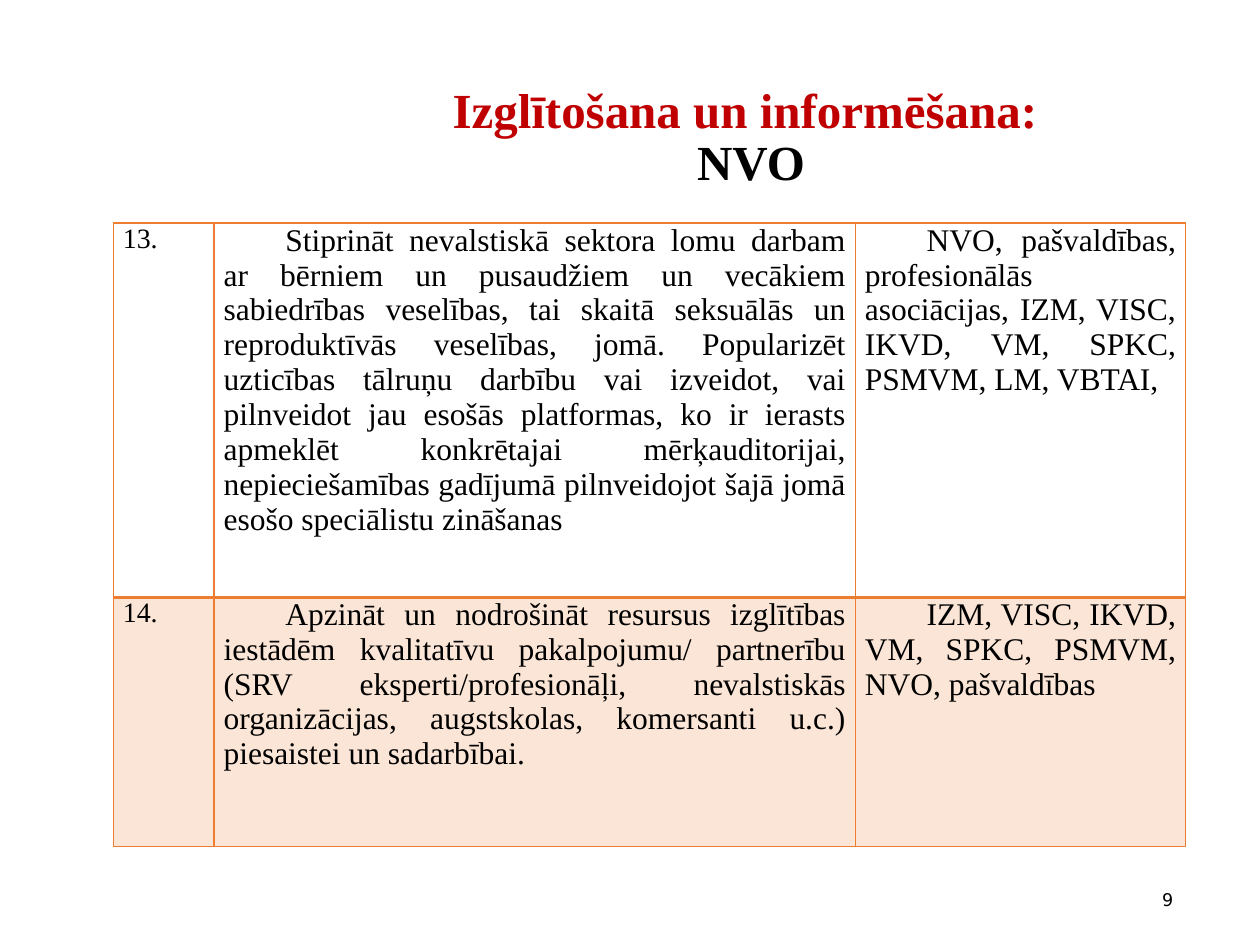
from lxml.etree import SubElement as Sub
from pptx import Presentation
from pptx.dml.color import RGBColor as Rgb
from pptx.enum.text import MSO_ANCHOR as Anchor, PP_ALIGN as Align
from pptx.oxml.ns import qn
from pptx.util import Inches, Pt

HUES = {"red": "C00000", "text": "000000", "line": "ED7D31", "tint": "FBE5D6"}
SERIF = "Times New Roman"
COLS = (0.8, 5.09, 2.62)
HIGHS = (2.97, 1.98)
ROWS = (
    (
        "13.",
        "Stiprināt nevalstiskā sektora lomu darbam ar bērniem un pusaudžiem un "
        "vecākiem sabiedrības veselības, tai skaitā seksuālās un reproduktīvās "
        "veselības, jomā. Popularizēt uzticības tālruņu darbību vai izveidot, vai "
        "pilnveidot jau esošās platformas, ko ir ierasts apmeklēt konkrētajai "
        "mērķauditorijai, nepieciešamības gadījumā pilnveidojot šajā jomā esošo "
        "speciālistu zināšanas",
        "NVO, pašvaldības, profesionālās asociācijas, IZM, VISC, IKVD, VM, SPKC, "
        "PSMVM, LM, VBTAI,",
    ),
    (
        "14.",
        "Apzināt un nodrošināt resursus izglītības iestādēm kvalitatīvu "
        "pakalpojumu/ partnerību (SRV eksperti/profesionāļi, nevalstiskās "
        "organizācijas, augstskolas, komersanti u.c.) piesaistei un sadarbībai.",
        "IZM, VISC, IKVD, VM, SPKC, PSMVM, NVO, pašvaldības",
    ),
)


def style(run, size, hue="text", face=SERIF, bold=False):
    font = run.font
    font.size, font.name, font.bold = Pt(size), face, bold
    font.color.rgb = Rgb.from_string(HUES[hue])


def add_title(slide):
    title = slide.shapes.title
    title.left, title.top = Inches(2.5), Inches(0.63)
    title.width, title.height = Inches(6.92), Inches(0.75)
    frame = title.text_frame
    frame.vertical_anchor = Anchor.TOP
    frame.word_wrap = True
    frame.text = "Izglītošana un informēšana: \vNVO"
    para = frame.paragraphs[0]
    para.alignment, para.line_spacing = Align.CENTER, 0.9
    for run, hue in zip(para.runs, ("red", "text")):
        style(run, 28, hue, bold=True)


def add_edge(cell, side, width):
    edge = Sub(cell._tc.get_or_add_tcPr(), qn(f"a:ln{side}"), w=str(Pt(width)))
    fill = Sub(edge, qn("a:solidFill"))
    Sub(fill, qn("a:srgbClr"), val=HUES["line"])


def fill_cell(cell, text, row, col):
    cell.text = text
    cell.margin_left = cell.margin_right = Pt(5.4)
    cell.margin_top = cell.margin_bottom = 0
    thick = "B" if row == 0 else "T"
    for side in "LRTB":
        add_edge(cell, side, 2 if side == thick else 1)
    if row % 2:
        cell.fill.solid()
        cell.fill.fore_color.rgb = Rgb.from_string(HUES["tint"])
    else:
        cell.fill.background()
    para = cell.text_frame.paragraphs[0]
    para.alignment = Align.JUSTIFY
    if col:
        props = para._p.get_or_add_pPr()
        props.set("marL", "0")
        props.set("indent", str(Inches(0.49)))
    style(para.runs[0], 18 if col else 16)


def add_grid(slide):
    grid = slide.shapes.add_table(
        len(ROWS), len(COLS), Inches(0.9), Inches(1.77),
        Inches(sum(COLS)), Inches(sum(HIGHS)),
    ).table
    grid.first_row = grid.horz_banding = False
    for col, width in zip(grid.columns, COLS):
        col.width = Inches(width)
    for row, high in zip(grid.rows, HIGHS):
        row.height = Inches(high)
    for r, row in enumerate(ROWS):
        for c, text in enumerate(row):
            fill_cell(grid.cell(r, c), text, r, c)


def add_number(slide, text):
    box = slide.shapes.add_textbox(Inches(8.56), Inches(6.94), Inches(0.85), Inches(0.4))
    frame = box.text_frame
    frame.word_wrap = True
    frame.vertical_anchor = Anchor.MIDDLE
    frame.text = text
    para = frame.paragraphs[0]
    para.alignment = Align.RIGHT
    style(para.runs[0], 10, face="DejaVu Sans")


def main():
    deck = Presentation()
    deck.slide_width, deck.slide_height = Inches(10), Inches(7.5)
    slide = deck.slides.add_slide(deck.slide_layouts[5])
    add_grid(slide)
    add_number(slide, "9")
    add_title(slide)
    deck.save("out.pptx")


if __name__ == "__main__":
    main()
